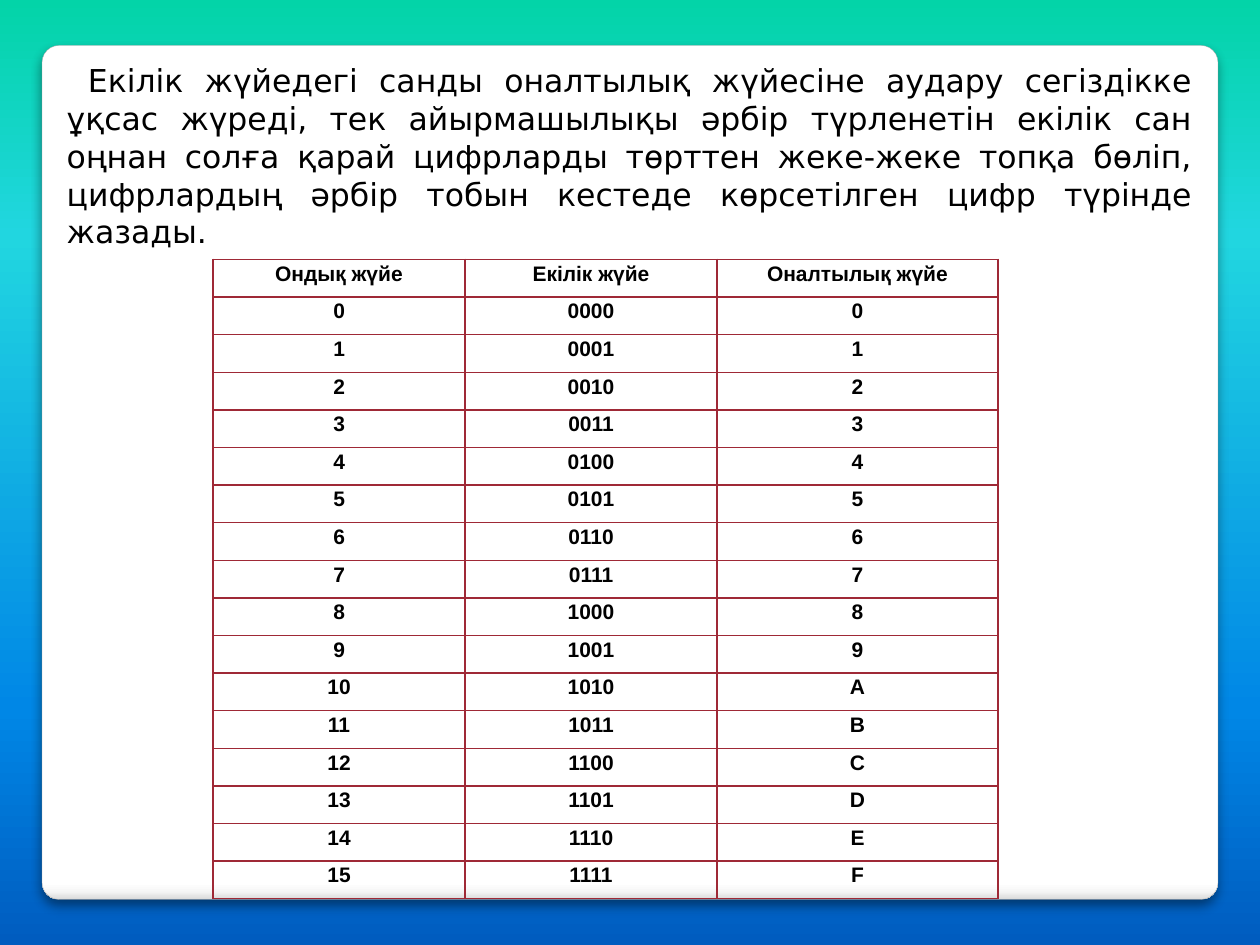
from lxml.etree import SubElement
from pptx import Presentation
from pptx.dml.color import RGBColor
from pptx.enum.shapes import MSO_SHAPE
from pptx.enum.text import PP_ALIGN
from pptx.oxml.ns import qn
from pptx.util import Pt

HUES = {
    "mint": "03D4A8", "aqua": "21D6E0", "blue": "0087E6", "navy": "005CBF",
    "white": "FFFFFF", "pale": "F7F7F7", "silver": "DADADA", "edge": "A4A4A4",
    "rule": "9F2936", "black": "000000",
}
SKY = [(0, "mint"), (25, "aqua"), (75, "blue"), (100, "navy")]
SHEEN = [(0, "white"), (98, "white"), (99, "pale"), (100, "silver")]
INTRO = (
    " Екiлiк жүйедегi санды оналтылық жүйесiне аудару сегiздiкке ұқсас жүредi, "
    "тек айырмашылықы әрбiр түрленетiн екiлiк сан оңнан солға қарай цифрларды "
    "төрттен жеке-жеке топқа бөлiп, цифрлардың әрбiр тобын кестеде көрсетiлген "
    "цифр түрiнде жазады."
)
HEADS = ("Ондық жүйе", "Екiлiк жүйе", "Оналтылық жүйе")
WIDTHS = (144, 144, 160.5)
ROW = 21.5


def node(root, tag, **attrs):
    """Add a child element with the given attributes."""
    return SubElement(root, qn(tag), {key: str(val) for key, val in attrs.items()})


def blend(fill, root, stops):
    """Fill with a downward gradient through the given stops."""
    fill.gradient()
    fill.gradient_angle = 270
    ramp = next(root.iter(qn("a:gsLst")))
    for old in list(ramp):
        ramp.remove(old)
    for pos, hue in stops:
        stop = node(ramp, "a:gs", pos=pos * 1000)
        node(stop, "a:srgbClr", val=HUES[hue])


def shade(shape, alpha, blur, dist):
    """Give a shape a soft shadow that falls straight down."""
    shape.shadow.inherit = False
    glow = node(shape.element.spPr.find(qn("a:effectLst")), "a:outerShdw",
                blurRad=Pt(blur), dist=Pt(dist), dir=5400000, rotWithShape=0)
    tint = node(glow, "a:srgbClr", val=HUES["black"])
    node(tint, "a:alpha", val=alpha * 1000)


def write(para, text, face, size, align, bold=False):
    """Add one styled run to a paragraph."""
    para.alignment = align
    run = para.add_run()
    run.text = text
    font = run.font
    font.name, font.size, font.bold = face, Pt(size), bold
    font.color.rgb = RGBColor.from_string(HUES["black"])


def add_panel(slide):
    """Draw the rounded white panel."""
    panel = slide.shapes.add_shape(
        MSO_SHAPE.ROUNDED_RECTANGLE, Pt(24), Pt(26), Pt(672), Pt(488))
    panel.adjustments[0] = 0.02
    blend(panel.fill, panel.element, SHEEN)
    panel.line.color.rgb = RGBColor.from_string(HUES["edge"])
    panel.line.width = Pt(0.16)
    shade(panel, 44, 6, 4)


def add_intro(slide):
    """Add the justified opening paragraph."""
    box = slide.shapes.add_textbox(Pt(31), Pt(31.5), Pt(657.5), Pt(116.5))
    frame = box.text_frame
    frame.word_wrap = True
    write(frame.paragraphs[0], INTRO, "DejaVu Sans", 18, PP_ALIGN.JUSTIFY)


def frame_cell(cell):
    """Rule all four sides of a cell."""
    props = cell._tc.get_or_add_tcPr()
    for tag in ("a:lnL", "a:lnR", "a:lnT", "a:lnB"):
        line = node(props, tag, w=Pt(1))
        node(node(line, "a:solidFill"), "a:srgbClr", val=HUES["rule"])


def fill_cell(cell, text):
    """Format one cell and write its text."""
    cell.margin_left = cell.margin_right = Pt(5)
    cell.margin_top = cell.margin_bottom = Pt(0)
    frame_cell(cell)
    cell.fill.background()
    para = cell.text_frame.paragraphs[0]
    para.line_spacing = Pt(15)
    write(para, text, "Arial", 12, PP_ALIGN.CENTER, True)


def add_grid(slide):
    """Add the table of decimal, binary and hexadecimal digits."""
    rows = [HEADS] + [(str(n), f"{n:04b}", f"{n:X}") for n in range(16)]
    table = slide.shapes.add_table(
        len(rows), len(HEADS), Pt(121.75), Pt(148.25),
        Pt(sum(WIDTHS)), Pt(ROW * len(rows))).table
    table.first_row = table.horz_banding = False
    for col, width in zip(table.columns, WIDTHS):
        col.width = Pt(width)
    for row, texts in zip(table.rows, rows):
        row.height = Pt(ROW)
        for cell, text in zip(row.cells, texts):
            fill_cell(cell, text)


def main():
    """Build and save the slide."""
    deck = Presentation()
    deck.slide_width, deck.slide_height = Pt(720), Pt(540)
    slide = deck.slides.add_slide(deck.slide_layouts[6])
    blend(slide.background.fill, slide.element, SKY)
    add_panel(slide)
    add_intro(slide)
    add_grid(slide)
    deck.save("out.pptx")


if __name__ == "__main__":
    main()
